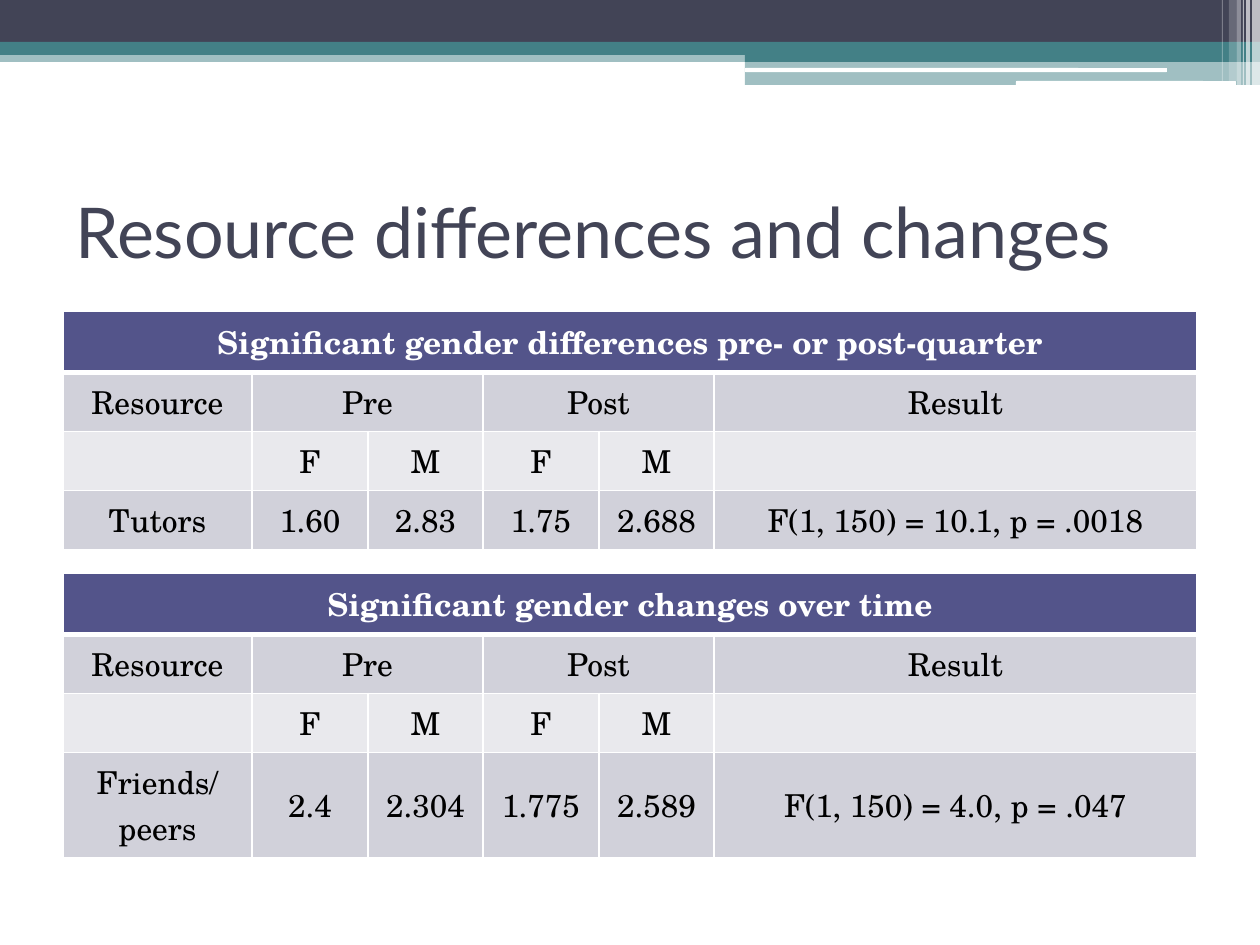
from lxml.etree import SubElement
from pptx import Presentation
from pptx.dml.color import RGBColor
from pptx.enum.shapes import MSO_SHAPE
from pptx.enum.text import MSO_ANCHOR, PP_ALIGN
from pptx.oxml.ns import qn
from pptx.util import Emu, Pt

EMU_PER_PX = 914400 / 126
COLORS = {
    "navy": "424456", "teal": "438086", "white": "FFFFFF", "black": "000000",
    "header": "53548A", "band_dark": "D1D1DA", "band_light": "E9E9ED",
}
TITLE_FONT, TABLE_FONT = "Lato", "TeX Gyre Schola"
COLUMN_WIDTHS = [189, 116, 115, 116, 115, 483]
ROW_HEIGHT = 59
COLUMN_HEADS = ["Resource", "Pre", None, "Post", None, "Result"]
GENDER_HEADS = ["", "F", "M", "F", "M", ""]


def px(length):
    return Emu(round(length * EMU_PER_PX))


def rgb(name):
    return RGBColor.from_string(COLORS[name])


def add_bar(slide, box, color, opacity=100, kind=MSO_SHAPE.RECTANGLE):
    bar = slide.shapes.add_shape(kind, *map(px, box))
    bar.shadow.inherit = False
    bar.line.fill.background()
    bar.fill.solid()
    bar.fill.fore_color.rgb = rgb(color)
    if opacity < 100:
        color_node = bar.fill._xPr.find(qn("a:solidFill"))[0]
        SubElement(color_node, qn("a:alpha")).set("val", str(opacity * 1000))


def add_banner(slide, left, top, width):
    """Bars across the top, with a stepped block and fine stripes at the right."""
    block = left + 745
    block_width = width - 745
    for box, color, opacity in [
        ((left, top + 50, width, 12), "teal", 50),
        ((left, top, width, 42), "navy", 100),
        ((left, top + 42, width, 13), "teal", 100),
        ((block, top + 49, block_width, 13), "teal", 100),
        ((block, top + 62, block_width, 23), "teal", 50),
    ]:
        add_bar(slide, box, color, opacity)
    for box in [(block, top + 68, 422, 4), (left + 1016, top + 81, 220, 5)]:
        add_bar(slide, box, "white", kind=MSO_SHAPE.ROUNDED_RECTANGLE)
    for inset, stripe_width, height, opacity in [
        (8, 8, 86, 65), (14, 4, 86, 65), (17, 1, 86, 60),
        (23, 4, 86, 40), (31, 8, 81, 20), (38, 1, 81, 30),
    ]:
        stripe = (left + width - inset, top, stripe_width, height)
        add_bar(slide, stripe, "white", opacity)


def add_run(paragraph, text, font_name, size, color, bold=False):
    run = paragraph.add_run()
    run.text = text
    run.font.name = font_name
    run.font.size = Pt(size)
    run.font.bold = bold
    run.font.color.rgb = rgb(color)


def place_title(slide, text, left, top, width, height):
    title = slide.shapes.title
    title.left, title.top, title.width, title.height = map(
        px, (left, top, width, height))
    frame = title.text_frame
    frame.word_wrap = True
    frame.vertical_anchor = MSO_ANCHOR.MIDDLE
    heading = frame.paragraphs[0]
    heading.alignment = PP_ALIGN.LEFT
    add_run(heading, text, TITLE_FONT, 40, "navy")


def set_borders(cell, top=1, bottom=1):
    """White rules on all four sides, with widths in points."""
    properties = cell._tc.get_or_add_tcPr()
    for side, points in (("L", 1), ("R", 1), ("T", top), ("B", bottom)):
        rule = SubElement(properties, qn(f"a:ln{side}"), w=str(Pt(points)))
        fill = SubElement(rule, qn("a:solidFill"))
        SubElement(fill, qn("a:srgbClr"), val=COLORS["white"])


def fill_cell(cell, text, row):
    set_borders(cell, top=3 if row == 1 else 1, bottom=3 if row == 0 else 1)
    cell.fill.solid()
    band = "band_dark" if row % 2 else "band_light"
    cell.fill.fore_color.rgb = rgb("header" if row == 0 else band)
    cell.vertical_anchor = MSO_ANCHOR.MIDDLE
    if not text:
        return
    frame = cell.text_frame
    for index, line in enumerate(text.split("\n")):
        paragraph = frame.add_paragraph() if index else frame.paragraphs[0]
        paragraph.alignment = PP_ALIGN.CENTER
        add_run(paragraph, line, TABLE_FONT, 18,
                "white" if row == 0 else "black", bold=row == 0)


def add_result_table(slide, heading, results, left, top, last_height):
    """A heading row, two rows of column heads, and one row of results."""
    rows = [[heading] + [None] * 5, COLUMN_HEADS, GENDER_HEADS, results]
    heights = [ROW_HEIGHT] * 3 + [last_height]
    table = slide.shapes.add_table(
        len(rows), len(COLUMN_WIDTHS), px(left), px(top),
        px(sum(COLUMN_WIDTHS)), px(sum(heights))).table
    for column, width in zip(table.columns, COLUMN_WIDTHS):
        column.width = px(width)
    for row, height in zip(table.rows, heights):
        row.height = px(height)
    for r, texts in enumerate(rows):
        for c, text in enumerate(texts):
            fill_cell(table.cell(r, c), text, r)
    for r, first, last in [(0, 0, 5), (1, 1, 2), (1, 3, 4)]:
        table.cell(r, first).merge(table.cell(r, last))


def main():
    deck = Presentation()
    deck.slide_width, deck.slide_height = px(1260), px(945)
    slide = deck.slides.add_slide(deck.slide_layouts[5])
    add_banner(slide, 0, 0, 1260)
    place_title(slide, "Resource differences and changes", 63, 157, 1134, 147)
    add_result_table(
        slide, "Significant gender differences pre- or post-quarter",
        ["Tutors", "1.60", "2.83", "1.75", "2.688",
         "F(1, 150) = 10.1, p = .0018"],
        63, 311, ROW_HEIGHT)
    add_result_table(
        slide, "Significant gender changes over time",
        ["Friends/\npeers", "2.4", "2.304", "1.775", "2.589",
         "F(1, 150) = 4.0, p = .047"],
        63, 573, 105)
    deck.save("out.pptx")


if __name__ == "__main__":
    main()
